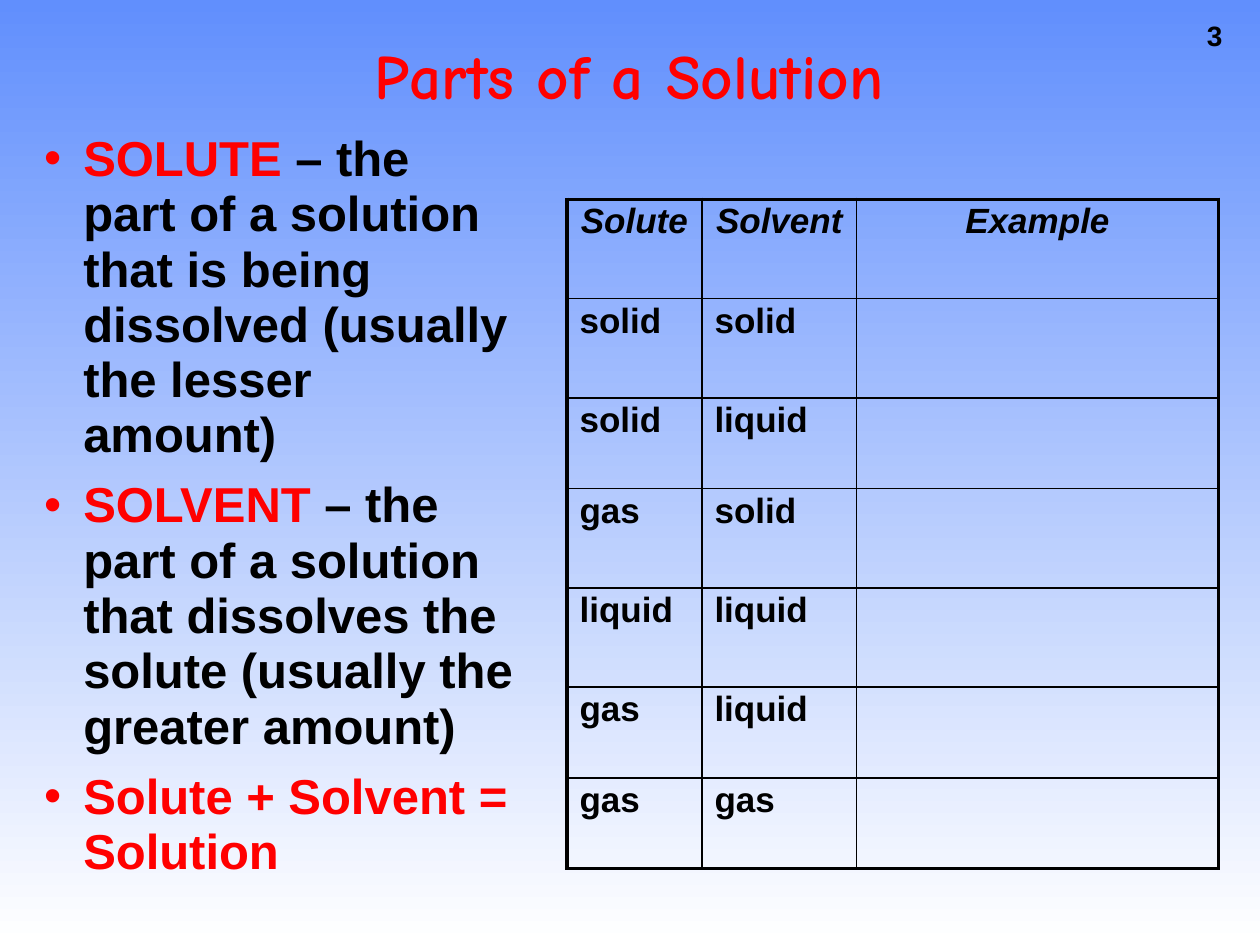
import pptx
import pptx.dml.color
import pptx.enum.text
import pptx.util
from lxml import etree
from pptx.oxml.ns import qn

Cm = pptx.util.Cm
Pt = pptx.util.Pt
CENTER = pptx.enum.text.PP_ALIGN.CENTER


def rgb(value):
    return pptx.dml.color.RGBColor.from_string(value)


def add_run(p, text, color, **formats):
    r = p.add_run()
    r.text = text
    r.font.color.rgb = rgb(color)
    for name, value in ({"name": "Arial", "bold": True} | formats).items():
        setattr(r.font, name, value)


prs = pptx.Presentation()
prs.slide_width, prs.slide_height = Cm(25.4), Cm(19.05)
s = prs.slides.add_slide(prs.slide_layouts[6])

fill = s.background.fill
fill.gradient()
fill.gradient_angle = 270
for stop, position, color in zip(fill.gradient_stops, (0, 1), ("618FFD", "FFFFFF")):
    stop.position = position
    stop.color.rgb = rgb(color)

sp = s.shapes.add_textbox(Cm(24.08), Cm(0.25), Cm(1.19), Cm(0.91))
sp.text_frame.word_wrap = False
add_run(sp.text_frame.paragraphs[0], "3", "000000", size=Pt(16))

sp = s.shapes.add_textbox(Cm(2.74), Cm(0), Cm(19.89), Cm(3.18))
tf = sp.text_frame
tf.word_wrap = True
tf.vertical_anchor = pptx.enum.text.MSO_ANCHOR.MIDDLE
p = tf.paragraphs[0]
p.alignment = CENTER
p.line_spacing = 0.9
add_run(p, "Parts of a Solution", "FF0000", name="Comic Neue", size=Pt(36))

definitions = [
    ("SOLUTE", " – the part of a solution that is being dissolved (usually the lesser amount)"),
    ("SOLVENT", " – the part of a solution that dissolves the solute (usually the greater amount)"),
    ("Solute + Solvent = Solution", ""),
]
sp = s.shapes.add_textbox(Cm(0.64), Cm(2.54), Cm(9.96), Cm(13.54))
tf = sp.text_frame
tf.word_wrap = True
for i, (term, meaning) in enumerate(definitions):
    p = tf.add_paragraph() if i else tf.paragraphs[0]
    p.line_spacing = 0.94
    p.space_before = Pt(8.4)
    pPr = p._p.get_or_add_pPr()
    pPr.set("marL", str(Cm(0.79)))
    pPr.set("indent", str(-Cm(0.79)))
    etree.SubElement(pPr, qn("a:buFont")).set("typeface", "Arial")
    etree.SubElement(pPr, qn("a:buChar")).set("char", "•")
    add_run(p, term, "FF0000", size=Pt(28))
    if meaning:
        add_run(p, meaning, "000000", size=Pt(28))

rows = [
    ("Solute", "Solvent", "Example"),
    ("solid", "solid", ""),
    ("solid", "liquid", ""),
    ("gas", "solid", ""),
    ("liquid", "liquid", ""),
    ("gas", "liquid", ""),
    ("gas", "gas", ""),
]
widths = [2.72, 3.12, 7.29]
heights = [2, 2, 1.83, 2, 2, 1.83, 1.83]
table = s.shapes.add_table(
    len(rows), len(widths), Cm(11.43), Cm(4.02), Cm(sum(widths)), Cm(sum(heights))
).table
table.first_row = table.horz_banding = False
for column, width in zip(table.columns, widths):
    column.width = Cm(width)
for row, height in zip(table.rows, heights):
    row.height = Cm(height)

for i, row in enumerate(rows):
    for j, text in enumerate(row):
        cell = table.cell(i, j)
        p = cell.text_frame.paragraphs[0]
        p.line_spacing = 0.9
        p.space_before = Pt(6)
        if i == 0:
            p.alignment = CENTER
        if text:
            add_run(p, text, "000000", size=Pt(20), italic=i == 0)
        tcPr = cell._tc.get_or_add_tcPr()
        outer = {
            "a:lnL": j == 0,
            "a:lnR": j == len(widths) - 1,
            "a:lnT": i == 0,
            "a:lnB": i == len(rows) - 1,
        }
        for tag, edge in outer.items():
            ln = etree.SubElement(tcPr, qn(tag), w=str(Pt(2.25 if edge else 1)))
            solid = etree.SubElement(ln, qn("a:solidFill"))
            etree.SubElement(solid, qn("a:srgbClr"), val="000000")
        cell.fill.background()

prs.save("out.pptx")
